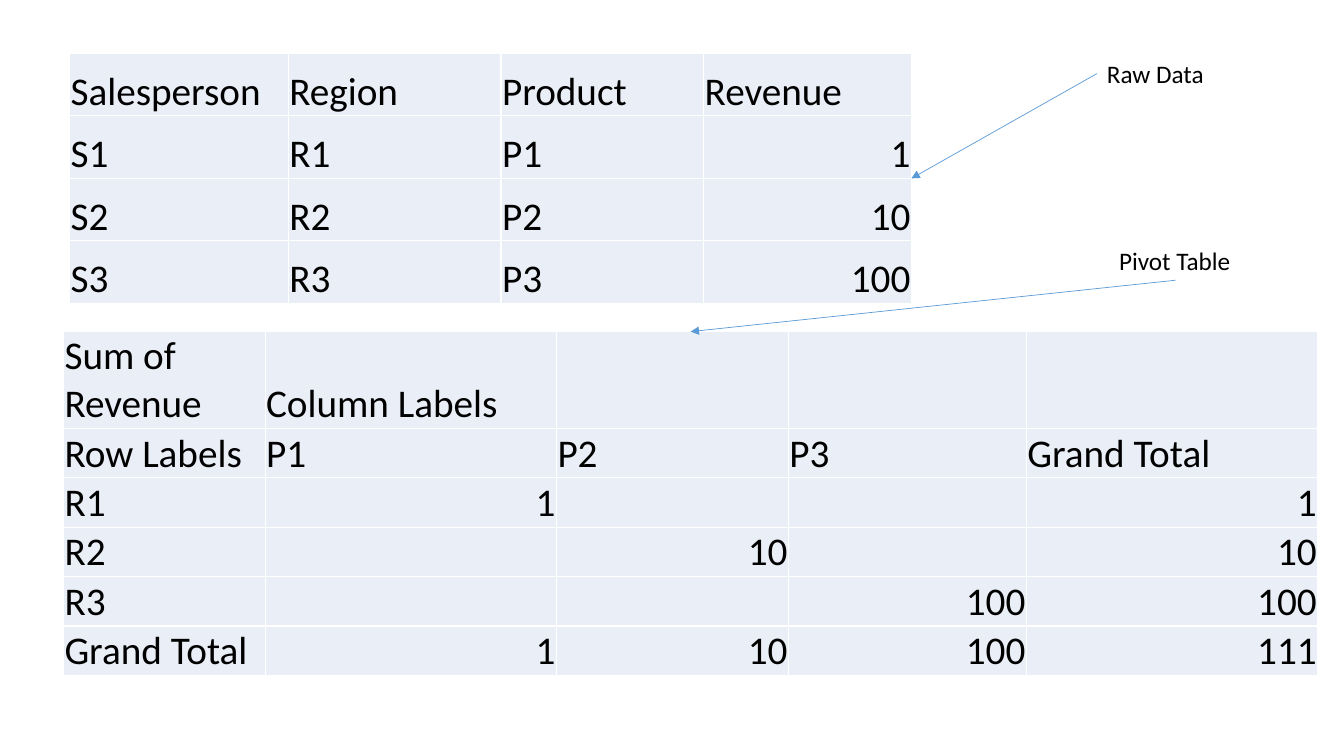
from lxml import etree
from pptx import Presentation
from pptx import util as u
from pptx.dml.color import RGBColor
from pptx.enum import shapes, text
from pptx.oxml import ns

PX = u.Inches(1) // 100
BLACK = RGBColor(0x00, 0x00, 0x00)
WHITE = RGBColor(0xFF, 0xFF, 0xFF)
PALE_BLUE = RGBColor(0xEA, 0xEF, 0xF7)
ARROW_BLUE = RGBColor(0x5B, 0x9B, 0xD5)
FONT = "Calibri"
TOP, LEFT, BOTTOM, RIGHT = range(4)

RAW_ROWS = [
    ["Salesperson", "Region", "Product", "Revenue"],
    ["S1", "R1", "P1", "1"],
    ["S2", "R2", "P2", "10"],
    ["S3", "R3", "P3", "100"],
]
PIVOT_ROWS = [
    ["Sum of Revenue", "Column Labels", "", "", ""],
    ["Row Labels", "P1", "P2", "P3", "Grand Total"],
    ["R1", "1", "", "", "1"],
    ["R2", "", "10", "", "10"],
    ["R3", "", "", "100", "100"],
    ["Grand Total", "1", "10", "100", "111"],
]


def add_span(para, words, size):
    span = para.add_run()
    span.text = words
    span.font.name = FONT
    span.font.size = u.Pt(size)
    span.font.color.rgb = BLACK


def add_borders(cell):
    properties = cell._tc.get_or_add_tcPr()
    for side in ("lnL", "lnR", "lnT", "lnB"):
        line = etree.SubElement(properties, ns.qn(f"a:{side}"), w=str(u.Pt(1)))
        fill = etree.SubElement(line, ns.qn("a:solidFill"))
        etree.SubElement(fill, ns.qn("a:srgbClr"), val=str(WHITE))


def format_cell(cell, words):
    add_borders(cell)
    cell.fill.solid()
    cell.fill.fore_color.rgb = PALE_BLUE
    cell.vertical_anchor = text.MSO_ANCHOR.BOTTOM
    cell.margin_left = cell.margin_right = cell.margin_top = PX
    cell.margin_bottom = 0
    if words:
        para = cell.text_frame.paragraphs[0]
        if words.isdigit():
            para.alignment = text.PP_ALIGN.RIGHT
        add_span(para, words, 28)


def add_grid(page, left, top, widths, heights, rows):
    """Place a table and return its frame; numbers are set to the right."""
    frame = page.shapes.add_table(
        len(rows), len(widths), left * PX, top * PX,
        sum(widths) * PX, sum(heights) * PX)
    table = frame.table
    table.first_row = table.horz_banding = False
    for column, width in zip(table.columns, widths):
        column.width = width * PX
    for row, height, values in zip(table.rows, heights, rows):
        row.height = height * PX
        for cell, words in zip(row.cells, values):
            format_cell(cell, words)
    return frame


def add_label(page, left, top, width, height, words):
    box = page.shapes.add_textbox(left * PX, top * PX, width * PX, height * PX)
    box.text_frame.word_wrap = False
    box.text_frame.auto_size = text.MSO_AUTO_SIZE.SHAPE_TO_FIT_TEXT
    add_span(box.text_frame.paragraphs[0], words, 18)
    return box


def add_arrow(page, label, label_side, frame, frame_side):
    arrow = page.shapes.add_connector(shapes.MSO_CONNECTOR.STRAIGHT, 0, 0, 0, 0)
    arrow.begin_connect(label, label_side)
    arrow.end_connect(frame, frame_side)
    arrow.line.color.rgb = ARROW_BLUE
    arrow.line.width = u.Pt(0.5)
    etree.SubElement(arrow.line._get_or_add_ln(), ns.qn("a:tailEnd"), type="triangle")
    etree.SubElement(arrow._element.spPr, ns.qn("a:effectLst"))


def build_page(page):
    raw = add_grid(page, 69, 53, [217, 211, 201, 206], [62] * 4, RAW_ROWS)
    pivot = add_grid(page, 63, 329, [200, 289, 230, 236, 289],
                     [91] + [49] * 5, PIVOT_ROWS)
    raw_label = add_label(page, 1088, 53, 117, 40, "Raw Data")
    add_arrow(page, raw_label, LEFT, raw, RIGHT)
    pivot_label = add_label(page, 1100, 238, 132, 40, "Pivot Table")
    add_arrow(page, pivot_label, BOTTOM, pivot, TOP)


def main():
    deck = Presentation()
    deck.slide_width, deck.slide_height = 1333 * PX, 750 * PX
    build_page(deck.slides.add_slide(deck.slide_layouts[6]))
    deck.save("out.pptx")


if __name__ == "__main__":
    main()
